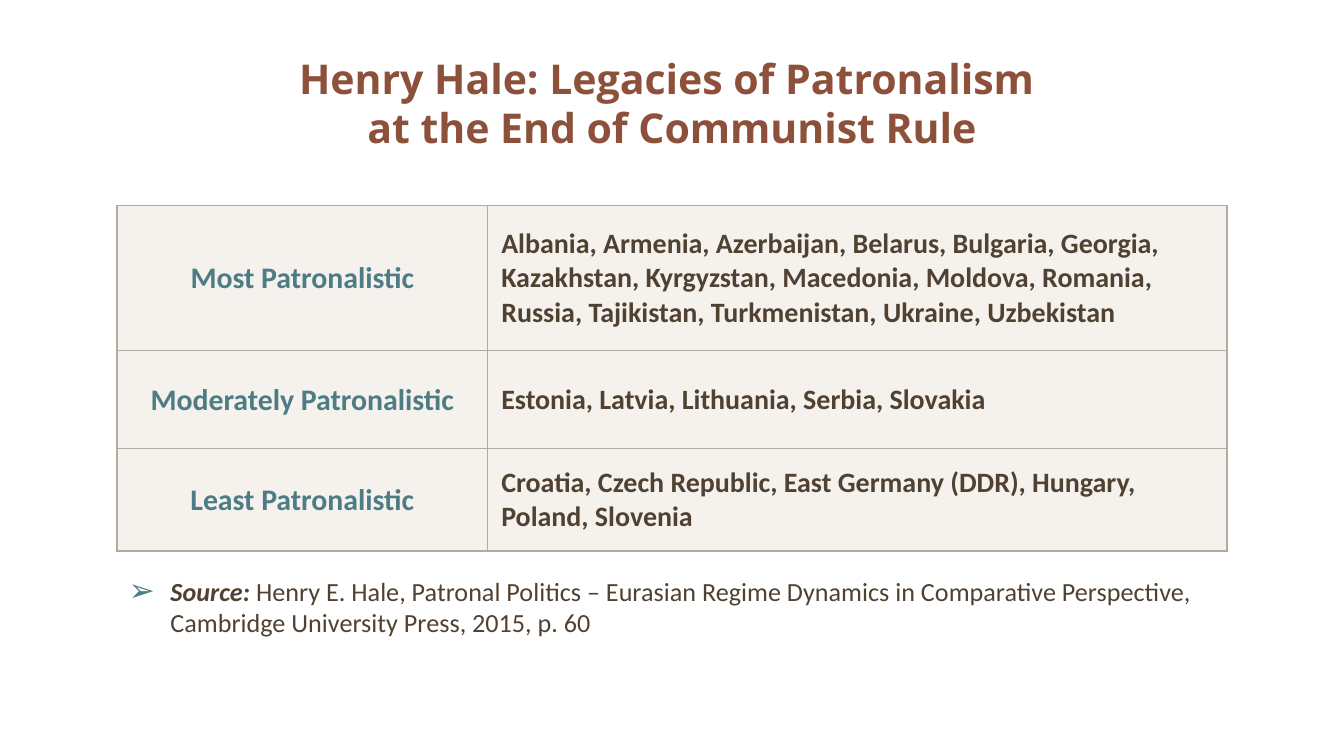
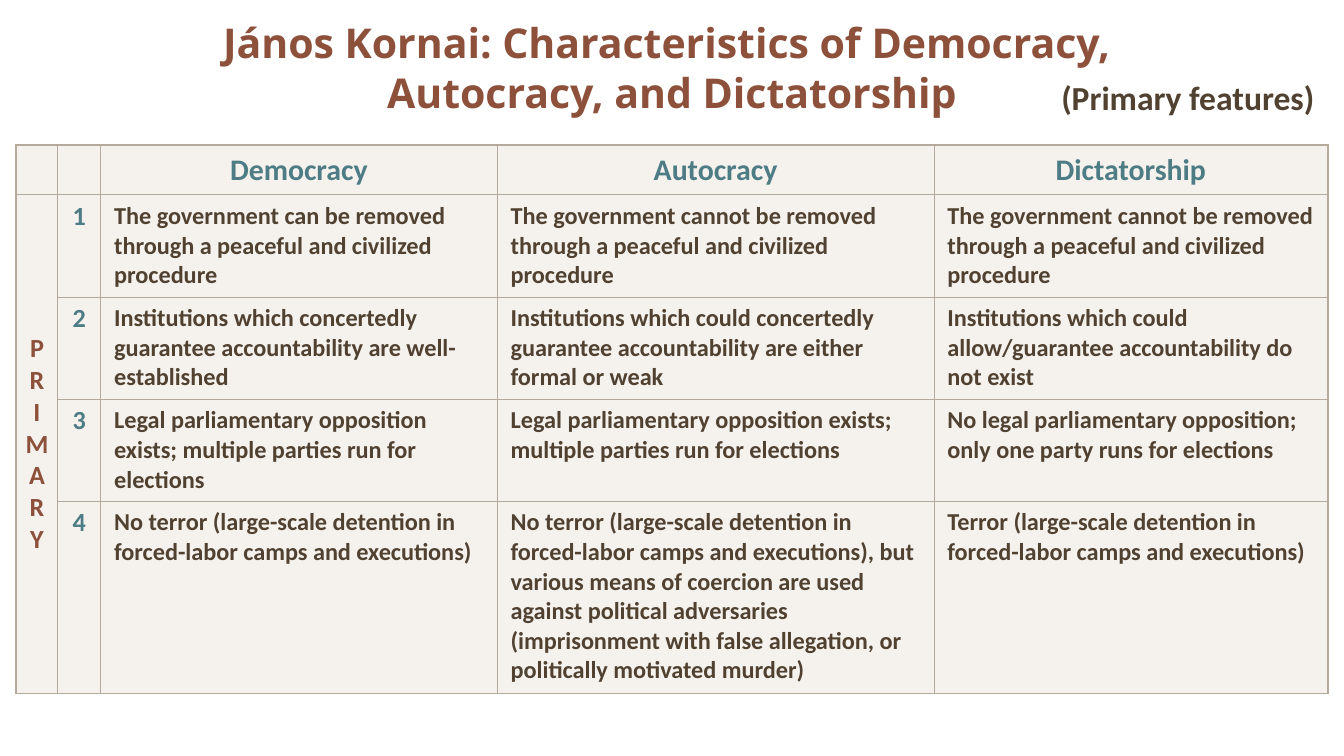
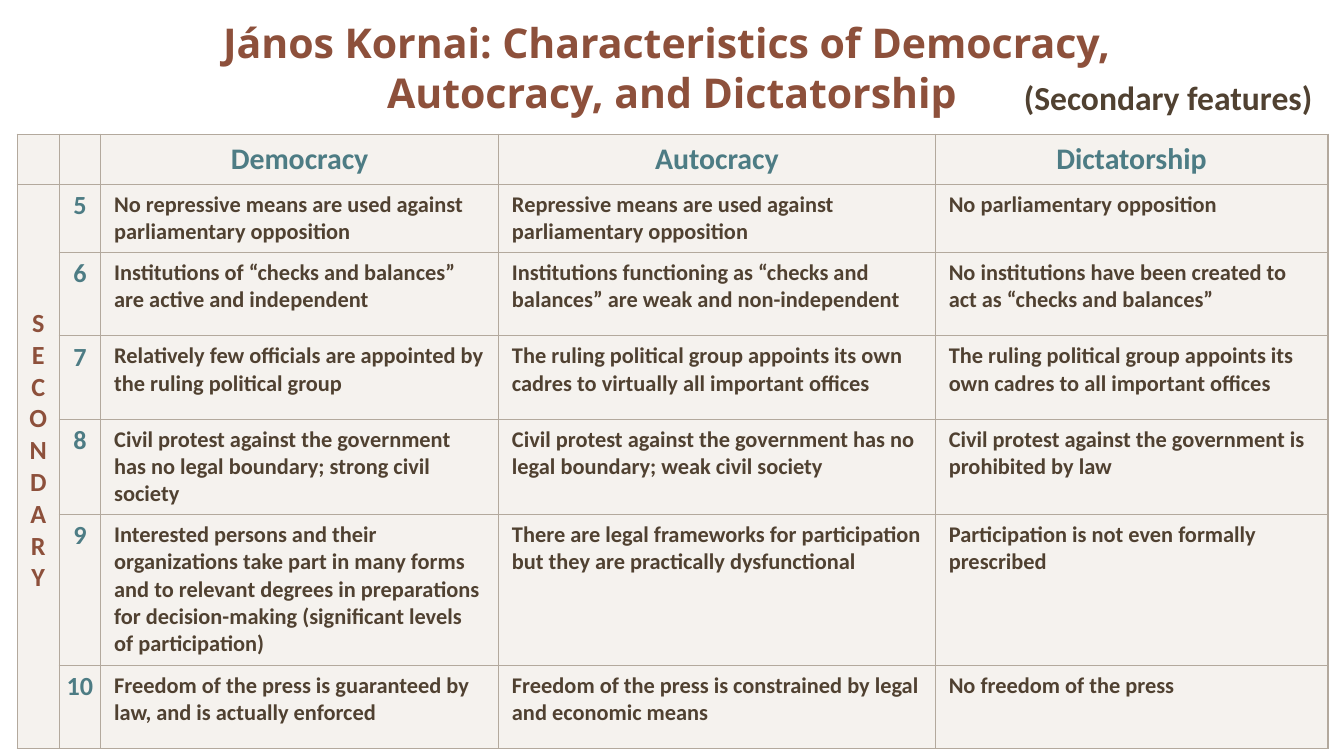
from lxml.etree import SubElement
from pptx import Presentation
from pptx.dml.color import RGBColor
from pptx.enum.text import MSO_ANCHOR, PP_ALIGN
from pptx.oxml.ns import qn
from pptx.util import Inches, Pt

RUST, TEAL, BROWN = "8D503B", "4D7C84", "504131"
EDGE, SAND = "B3A99D", "EFEAE4"
PAD = (0.1, 0.05, 0.1, 0.05)
SLIM = (0.03, 0.04, 0.03, 0)
LEFT, MID, RIGHT = PP_ALIGN.LEFT, PP_ALIGN.CENTER, PP_ALIGN.RIGHT
TOP, HALF = MSO_ANCHOR.TOP, MSO_ANCHOR.MIDDLE

KORNAI = "János Kornai: Characteristics of Democracy, \vAutocracy, and Dictatorship"
HEADS = ["Democracy", "Autocracy", "Dictatorship"]
LEVELS = [
    ("Most Patronalistic",
     "Albania, Armenia, Azerbaijan, Belarus, Bulgaria, Georgia, Kazakhstan, "
     "Kyrgyzstan, Macedonia, Moldova, Romania, Russia, Tajikistan, "
     "Turkmenistan, Ukraine, Uzbekistan"),
    ("Moderately Patronalistic", "Estonia, Latvia, Lithuania, Serbia, Slovakia"),
    ("Least Patronalistic",
     "Croatia, Czech Republic, East Germany (DDR), Hungary, Poland, Slovenia"),
]
FIRST = [
    ("The government can be removed through a peaceful and civilized procedure",
     "The government cannot be removed through a peaceful and civilized procedure",
     "The government cannot be removed through a peaceful and civilized procedure"),
    ("Institutions which concertedly guarantee accountability are well-established",
     "Institutions which could concertedly guarantee accountability are either formal or weak",
     "Institutions which could allow/guarantee accountability do not exist"),
    ("Legal parliamentary opposition exists; multiple parties run for elections",
     "Legal parliamentary opposition exists; multiple parties run for elections",
     "No legal parliamentary opposition; only one party runs for elections"),
    ("No terror (large-scale detention in forced-labor camps and executions)",
     "No terror (large-scale detention in forced-labor camps and executions), but various "
     "means of coercion are used against political adversaries (imprisonment with false "
     "allegation, or politically motivated murder)",
     "Terror (large-scale detention in forced-labor camps and executions)"),
]
SECOND = [
    ("No repressive means are used against parliamentary opposition",
     "Repressive means are used against parliamentary opposition",
     "No parliamentary opposition"),
    ("Institutions of “checks and balances” are active and independent",
     "Institutions functioning as “checks and balances” are weak and non-independent",
     "No institutions have been created to act as “checks and balances”"),
    ("Relatively few officials are appointed by the ruling political group",
     "The ruling political group appoints its own cadres to virtually all important offices",
     "The ruling political group appoints its own cadres to all important offices"),
    ("Civil protest against the government has no legal boundary; strong civil society",
     "Civil protest against the government has no legal boundary; weak civil society",
     "Civil protest against the government is prohibited by law"),
    ("Interested persons and their organizations take part in many forms and to relevant "
     "degrees in preparations for decision-making (significant levels of participation)",
     "There are legal frameworks for participation but they are practically dysfunctional",
     "Participation is not even formally prescribed"),
    ("Freedom of the press is guaranteed by law, and is actually enforced",
     "Freedom of the press is constrained by legal and economic means",
     "No freedom of the press"),
]


def paint(code):
    return RGBColor.from_string(code)


def write(para, text, size=14, color=BROWN, face="Calibri", bold=True,
          italic=False, align=LEFT):
    para.alignment = align
    for num, line in enumerate(text.split("\v")):
        if num:
            para.add_line_break()
        run = para.add_run()
        run.text = line
        font = run.font
        font.name, font.size = face, Pt(size)
        font.bold, font.italic = bold, italic
        font.color.rgb = paint(color)


def frame(slide, box, anchor=TOP):
    area = slide.shapes.add_textbox(*map(Inches, box)).text_frame
    area.word_wrap = True
    area.vertical_anchor = anchor
    return area.paragraphs[0]


def title(slide, text, high):
    para = frame(slide, (0.12, 0, 9.76, high), HALF)
    write(para, text, size=22, color=RUST, face="Open Sans", align=MID)


def source(slide, box, lead, text):
    para = frame(slide, box)
    props = para._p.get_or_add_pPr()
    props.set("marL", str(Inches(0.31)))
    props.set("indent", str(-Inches(0.31)))
    tint = SubElement(props, qn("a:buClr"))
    SubElement(tint, qn("a:srgbClr"), val="4D7C8B")
    SubElement(props, qn("a:buSzPct"), val="120000")
    SubElement(props, qn("a:buFont"), typeface="Arial")
    SubElement(props, qn("a:buChar"), char="➢")
    write(para, lead, italic=True)
    write(para, text, bold=False)


def grid(slide, left, top, cols, rows):
    shape = slide.shapes.add_table(
        len(rows), len(cols),
        *map(Inches, (left, top, sum(cols), sum(rows))))
    table = shape.table
    table.first_row = table.horz_banding = False
    for col, wide in zip(table.columns, cols):
        col.width = Inches(wide)
    for row, high in zip(table.rows, rows):
        row.height = Inches(high)
    return table


def dress(table):
    down, across = len(table.rows), len(table.columns)
    for row in range(down):
        for col in range(across):
            cell = table.cell(row, col)
            end = row + (cell.span_height if cell.is_merge_origin else 1)
            outer = {"L": col == 0, "R": col == across - 1,
                     "T": row == 0, "B": end == down}
            props = cell._tc.get_or_add_tcPr()
            for side, edge in outer.items():
                line = SubElement(props, qn("a:ln" + side),
                                  w=str(Pt(1 if edge else 0.5)))
                fill = SubElement(line, qn("a:solidFill"))
                SubElement(fill, qn("a:srgbClr"), val=EDGE)
            cell.fill.solid()
            cell.fill.fore_color.rgb = paint(SAND)
            tone = props.find(qn("a:solidFill")).find(qn("a:srgbClr"))
            SubElement(tone, qn("a:alpha"), val="60000")


def enter(cell, text, anchor=TOP, pad=PAD, **style):
    cell.vertical_anchor = anchor
    (cell.margin_left, cell.margin_top,
     cell.margin_right, cell.margin_bottom) = map(Inches, pad)
    area = cell.text_frame
    for num, line in enumerate(text.split("\n")):
        para = area.add_paragraph() if num else area.paragraphs[0]
        write(para, line, **style)


def levels(slide, left, top):
    table = grid(slide, left, top, (2.76, 5.5), (1.08, 0.73, 0.76))
    for row, (name, lands) in enumerate(LEVELS):
        enter(table.cell(row, 0), name, HALF, size=16, color=TEAL, align=MID)
        enter(table.cell(row, 1), lands, HALF, size=15)
    dress(table)


def traits(slide, left, top, cols, rows, side, start, facts, size, foot=0):
    table = grid(slide, left, top, cols, rows)
    for col in range(2):
        blank = table.cell(0, col).text_frame.paragraphs[0]
        SubElement(blank._p, qn("a:endParaRPr"), sz="1400")
    for col, head in enumerate(HEADS, 2):
        enter(table.cell(0, col), head, size=16, color=TEAL, align=MID)
    spine = table.cell(1, 0)
    spine.merge(table.cell(len(facts), 0))
    enter(spine, "\n".join(side), HALF, (0, 0, 0, foot), color=RUST, align=MID)
    for row, fact in enumerate(facts, 1):
        enter(table.cell(row, 1), str(start + row - 1), pad=SLIM,
              color=TEAL, align=MID)
        for col, text in enumerate(fact, 2):
            enter(table.cell(row, col), text, size=size)
    dress(table)


def kornai(deck, note, align, **table):
    slide = page(deck)
    title(slide, KORNAI, 1)
    traits(slide, **table)
    write(frame(slide, (7.52, 0.52, 2.36, 0.4)), note, size=18, align=align)


def hale(deck):
    slide = page(deck)
    title(slide, "Henry Hale: Legacies of Patronalism \vat the End of Communist Rule", 1.53)
    source(slide, (0.86, 4.23, 8.26, 0.57), "Source: ",
           "Henry E. Hale, Patronal Politics – Eurasian Regime Dynamics in "
           "Comparative Perspective, Cambridge University Press, 2015, p. 60")
    levels(slide, 0.87, 1.53)


def page(deck):
    return deck.slides.add_slide(deck.slide_layouts[6])


def main():
    deck = Presentation()
    deck.slide_width = Inches(10)
    deck.slide_height = deck.slide_width * 9 // 16
    hale(deck)
    kornai(deck, "(Primary features)", RIGHT, left=0.12, top=1.08,
           cols=(0.31, 0.32, 2.95, 3.25, 2.93),
           rows=(0.37, 0.76, 0.76, 0.76, 1.43),
           side="PRIMARY", start=1, facts=FIRST, size=13)
    kornai(deck, "(Secondary features)", LEFT, left=0.13, top=1,
           cols=(0.31, 0.31, 2.96, 3.25, 2.92),
           rows=(0.37, 0.51, 0.62, 0.62, 0.71, 1.12, 0.62),
           side="SECONDARY", start=5, facts=SECOND, size=12, foot=0.23)
    deck.save("out.pptx")


if __name__ == "__main__":
    main()
